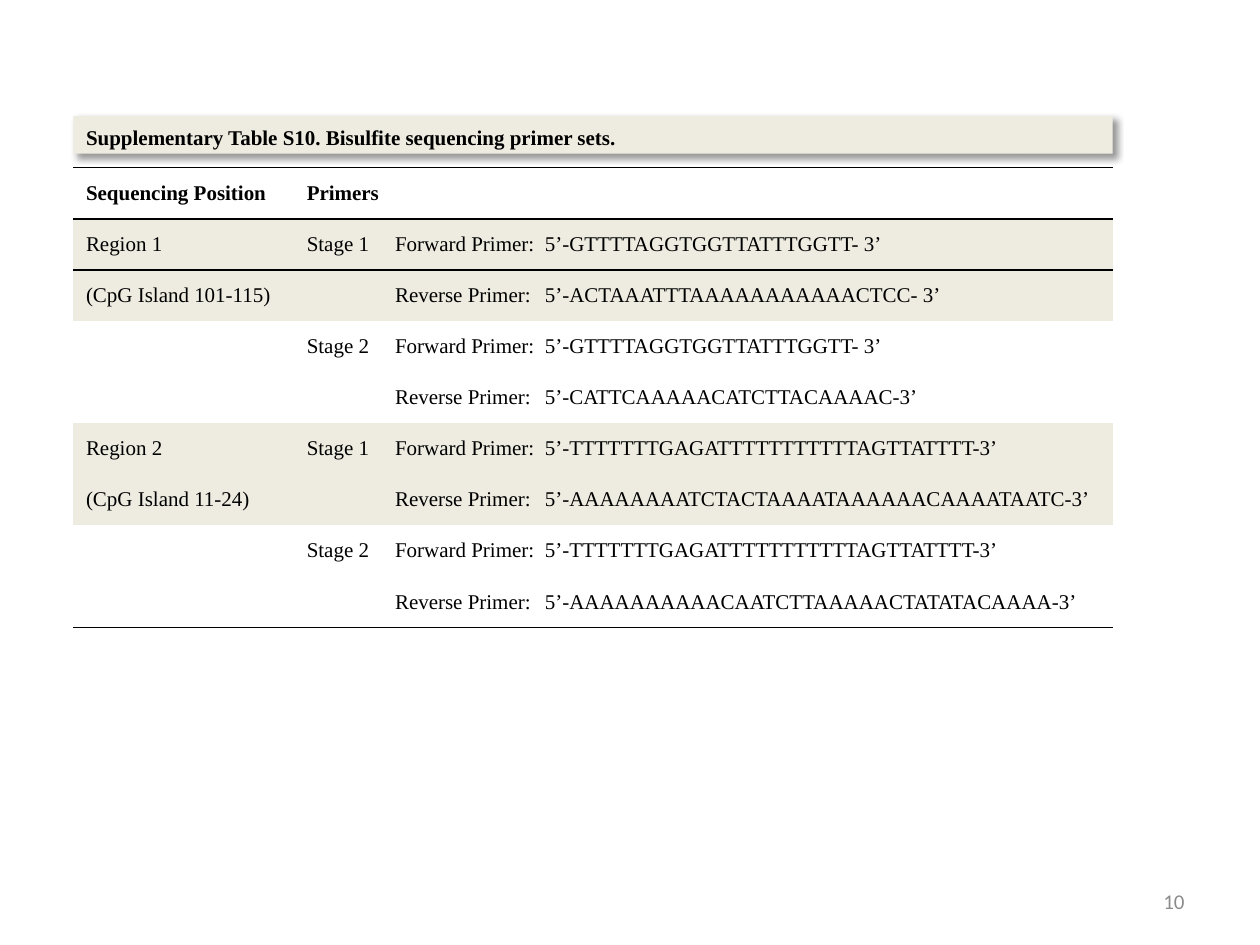
import pptx
import pptx.util
import pptx.dml.color
import pptx.enum.text
import pptx.oxml
import pptx.oxml.ns
from pptx.util import Cm, Pt

TITLE = "Supplementary Table S10. Bisulfite sequencing primer sets."
HEADER = ("Sequencing Position", "Primers")
# position, stage, primer, sequence
PRIMERS = [
    ("Region 1", "Stage 1", "Forward Primer:", "5’-GTTTTAGGTGGTTATTTGGTT- 3’"),
    ("(CpG Island 101-115)", "", "Reverse Primer:", "5’-ACTAAATTTAAAAAAAAAAACTCC- 3’"),
    ("", "Stage 2", "Forward Primer:", "5’-GTTTTAGGTGGTTATTTGGTT- 3’"),
    ("", "", "Reverse Primer:", "5’-CATTCAAAAACATCTTACAAAAC-3’"),
    ("Region 2", "Stage 1", "Forward Primer:", "5’-TTTTTTTGAGATTTTTTTTTTTAGTTATTTT-3’"),
    ("(CpG Island 11-24)", "", "Reverse Primer:", "5’-AAAAAAAATCTACTAAAATAAAAAACAAAATAATC-3’"),
    ("", "Stage 2", "Forward Primer:", "5’-TTTTTTTGAGATTTTTTTTTTTAGTTATTTT-3’"),
    ("", "", "Reverse Primer:", "5’-AAAAAAAAAACAATCTTAAAAACTATATACAAAA-3’"),
]
PAGE = "10"

COLORS = {"ink": "000000", "band": "EEECE1", "page": "8C8C8C"}
LEFT = 1.48
COLUMNS = (4.45, 16.5)
WIDTH = sum(COLUMNS)
ROW_HEIGHT = 1.03
TABS = (1.78, 4.8)
RULES = {0, 1, 2, len(PRIMERS) + 1}  # row edges that carry a line


def rgb(name):
    return pptx.dml.color.RGBColor.from_string(COLORS[name])


def xml(body):
    return pptx.oxml.parse_xml(body.replace(">", f" {pptx.oxml.ns.nsdecls('a')}>", 1))


def write(tf, text, font="Times New Roman", color="ink", bold=False, align="LEFT", tabs=()):
    tf.word_wrap = True
    tf.vertical_anchor = pptx.enum.text.MSO_ANCHOR.MIDDLE
    p = tf.paragraphs[0]
    p.alignment = pptx.enum.text.PP_ALIGN[align]
    if tabs:
        stops = "".join(f'<a:tab pos="{Cm(t)}" algn="l"/>' for t in tabs)
        p._p.get_or_add_pPr().append(xml(f"<a:tabLst>{stops}</a:tabLst>"))
    r = p.add_run()
    r.text = text
    r.font.name, r.font.size, r.font.bold = font, Pt(12), bold
    r.font.color.rgb = rgb(color)
    return p


def set_borders(cell, row):
    """Draw the ruled edges of a cell and hide the style's other borders."""
    ruled = {"L": False, "R": False, "T": row in RULES, "B": row + 1 in RULES}
    for i, (side, on) in enumerate(ruled.items()):
        fill = f'<a:solidFill><a:srgbClr val="{COLORS["ink"]}"/></a:solidFill>' if on else "<a:noFill/>"
        cell._tc.get_or_add_tcPr().insert(i, xml(f'<a:ln{side} w="{Pt(1)}">{fill}</a:ln{side}>'))


def add_title(s):
    sp = s.shapes.title
    sp.left, sp.top, sp.width, sp.height = Cm(LEFT), Cm(2.34), Cm(WIDTH), Cm(0.76)
    sp.fill.solid()
    sp.fill.fore_color.rgb = rgb("band")
    sp._element.spPr.append(xml(
        f'<a:effectLst><a:outerShdw blurRad="{Pt(4)}" dist="{Pt(3)}" dir="2700000" algn="tl" rotWithShape="0">'
        f'<a:srgbClr val="{COLORS["ink"]}"><a:alpha val="40000"/></a:srgbClr></a:outerShdw></a:effectLst>'))
    sp.text_frame.auto_size = pptx.enum.text.MSO_AUTO_SIZE.NONE
    p = write(sp.text_frame, TITLE, bold=True)
    p.line_spacing, p.space_after = 1.15, Pt(10)


def add_primer_table(s):
    rows = [HEADER] + [(position, "\t".join(parts)) for position, *parts in PRIMERS]
    table = s.shapes.add_table(len(rows), len(COLUMNS), Cm(LEFT), Cm(3.38),
                               Cm(WIDTH), Cm(ROW_HEIGHT * len(rows))).table
    table.first_row = table.horz_banding = False
    for column, width in zip(table.columns, COLUMNS):
        column.width = Cm(width)
    for i, texts in enumerate(rows):
        table.rows[i].height = Cm(ROW_HEIGHT)
        for j, text in enumerate(texts):
            cell = table.cell(i, j)
            cell.vertical_anchor = pptx.enum.text.MSO_ANCHOR.MIDDLE
            if i and (i - 1) % 4 < 2:  # first stage of each region
                cell.fill.solid()
                cell.fill.fore_color.rgb = rgb("band")
            else:
                cell.fill.background()
            set_borders(cell, i)
            write_cell(cell, text, bold=i == 0, tabs=TABS if i and j else ())


def write_cell(cell, text, **fmt):
    write(cell.text_frame, text, **fmt)
    # wrapping and anchoring belong to the cell, not to its text body
    body = cell.text_frame._txBody.bodyPr
    for name in ("wrap", "anchor"):
        body.attrib.pop(name, None)


def main():
    prs = pptx.Presentation()
    prs.slide_width, prs.slide_height = Cm(25.4), Cm(19.05)
    s = prs.slides.add_slide(prs.slide_layouts[5])
    add_title(s)
    add_primer_table(s)
    page = s.shapes.add_textbox(Cm(18.2), Cm(17.66), Cm(5.93), Cm(1.01))
    write(page.text_frame, PAGE, font="Calibri", color="page", align="RIGHT")
    prs.save("out.pptx")


if __name__ == "__main__":
    main()
